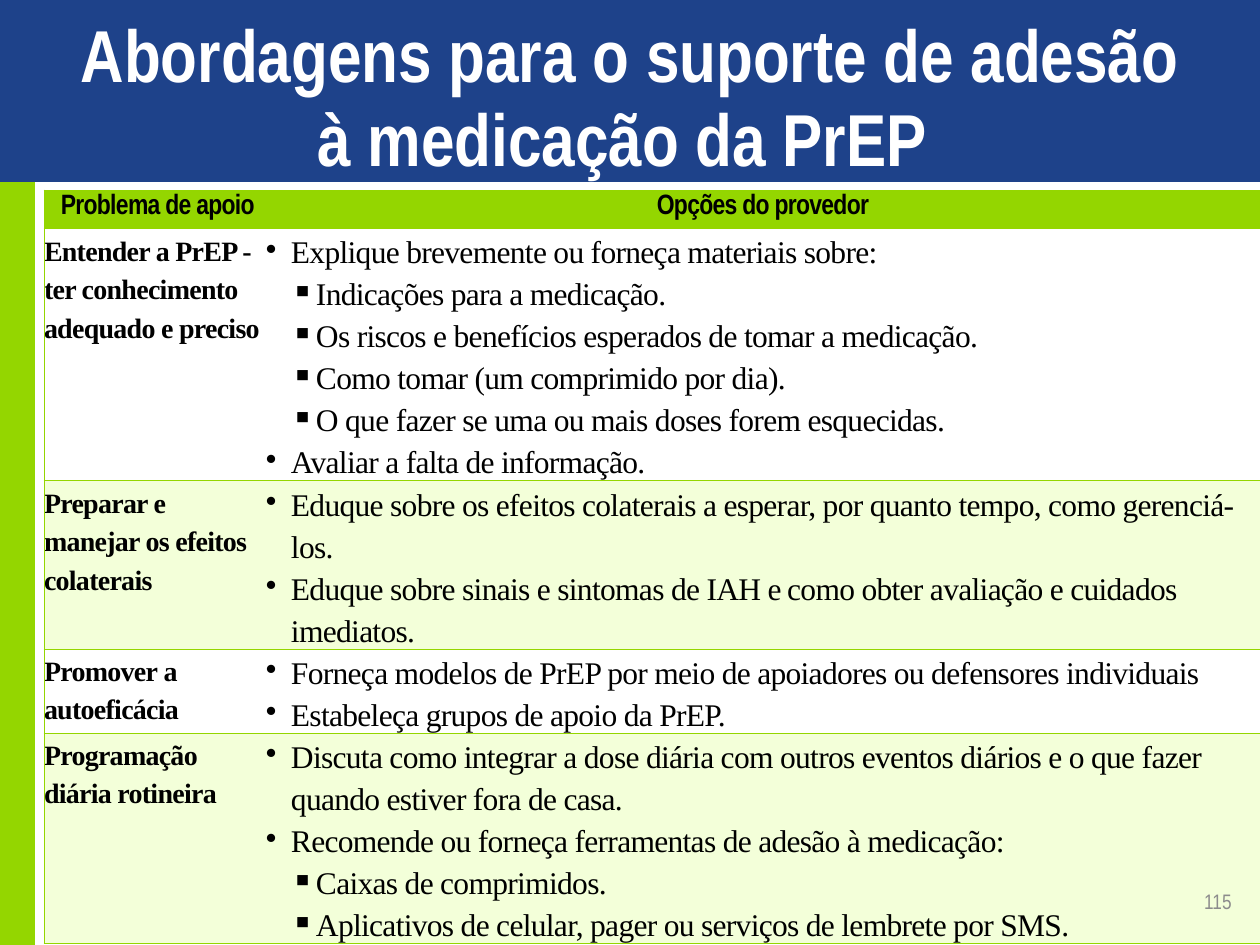
from pptx import Presentation, util as u
from pptx.dml.color import RGBColor
from pptx.enum import shapes, text
from pptx.oxml import parse_xml
from pptx.oxml.ns import nsdecls

EMU_PER_PX = u.Inches(1) / 126

BLUE = RGBColor(0x1E, 0x42, 0x8A)
GREEN = RGBColor(0x94, 0xD6, 0x00)
PALE_GREEN = RGBColor(0xF3, 0xFF, 0xD9)
WHITE = RGBColor(0xFF, 0xFF, 0xFF)
BLACK = RGBColor(0, 0, 0)
GRAY = RGBColor(0x8C, 0x8C, 0x8C)

NARROW = "Arial Narrow"
SERIF = "Times New Roman"

BULLETS = ("•", "▪")
INDENT = 25
HEADER_HEIGHT = 33
LINE_HEIGHT = 42
GAP = "|"  # stands for a narrow space between two runs

HEADERS = ("\u00a0Problema de apoio", "Opções do provedor")

# Label, number of text lines, and options as (level, wording)
ROWS = [
    ("Entender a PrEP - ter conhecimento adequado e preciso", 6, [
        (0, "Explique brevemente ou forneça materiais sobre:"),
        (1, "Indicações para a medicação."),
        (1, "Os riscos e benefícios esperados de tomar a medicação."),
        (1, "Como tomar (um comprimido por dia)."),
        (1, "O que fazer se uma ou mais doses forem esquecidas."),
        (0, "Avaliar a falta de informação."),
    ]),
    ("Preparar e manejar os efeitos colaterais", 4, [
        (0, "Eduque sobre os efeitos colaterais a esperar, por quanto tempo, "
            "como gerenciá-los."),
        (0, "Eduque sobre sinais e sintomas de IAH e|como obter avaliação e "
            "cuidados imediatos."),
    ]),
    ("Promover|a autoeficácia", 2, [
        (0, "Forneça modelos de PrEP por meio de apoiadores ou defensores "
            "individuais"),
        (0, "Estabeleça grupos de apoio da PrEP."),
    ]),
    ("Programação diária rotineira", 5, [
        (0, "Discuta como integrar a dose diária com outros eventos diários e "
            "o que fazer quando estiver fora de casa."),
        (0, "Recomende ou forneça ferramentas de adesão à medicação:"),
        (1, "Caixas de comprimidos."),
        (1, "Aplicativos de celular, pager ou serviços de lembrete por SMS."),
    ]),
]


def px(value):
    return u.Emu(round(value * EMU_PER_PX))


class SlideBuilder:
    def __init__(self, slide):
        self.slide = slide

    def band(self, left, top, width, height, color):
        shape = self.slide.shapes.add_shape(
            shapes.MSO_SHAPE.RECTANGLE, *map(px, (left, top, width, height)))
        shape.shadow.inherit = False
        shape.fill.solid()
        shape.fill.fore_color.rgb = color
        shape.line.fill.background()

    def run(self, paragraph, wording, size, font, color=BLACK, bold=False,
            spacing=0):
        run = paragraph.add_run()
        run.text = wording
        run.font.size = u.Pt(size)
        run.font.name = font
        run.font.bold = bold
        run.font.color.rgb = color
        if spacing:
            run.font._element.set("spc", str(spacing))

    def text_box(self, box, wording, size, color, align, bold=False,
                 line_spacing=None):
        frame = self.slide.shapes.add_textbox(*map(px, box)).text_frame
        frame.word_wrap = True
        frame.vertical_anchor = text.MSO_ANCHOR.MIDDLE
        paragraph = frame.paragraphs[0]
        paragraph.alignment = align
        paragraph.line_spacing = line_spacing
        self.run(paragraph, wording, size, NARROW, color, bold)

    def cell_text(self, paragraph, wording, size, font, bold):
        for index, part in enumerate(wording.split(GAP)):
            if index:
                self.run(paragraph, " ", 14, NARROW, bold=bold)
            self.run(paragraph, part, size, font, bold=bold, spacing=-40)

    def bullet(self, paragraph, level):
        paragraph.level = level
        properties = paragraph._p.get_or_add_pPr()
        properties.set("marL", str(px(INDENT * (level + 1))))
        properties.set("indent", str(-px(INDENT)))
        properties.append(parse_xml(
            f'<a:buChar {nsdecls("a")} char="{BULLETS[level]}"/>'))

    def style_cell(self, cell, color, sides):
        cell.margin_left = cell.margin_right = 0
        cell.margin_top = cell.margin_bottom = 0
        properties = cell._tc.get_or_add_tcPr()
        for side in "LRTB":
            paint = (f'<a:solidFill><a:srgbClr val="{GREEN}"/></a:solidFill>'
                     if side in sides else "<a:noFill/>")
            properties.append(parse_xml(
                f'<a:ln{side} {nsdecls("a")} w="{u.Pt(0.5)}">{paint}'
                f'</a:ln{side}>'))
        cell.fill.solid()
        cell.fill.fore_color.rgb = color

    def table(self, left, top, widths, headers, rows):
        heights = [HEADER_HEIGHT] + [LINE_HEIGHT * row[1] for row in rows]
        table = self.slide.shapes.add_table(
            len(heights), len(widths), px(left), px(top),
            px(sum(widths)), px(sum(heights))).table
        table.first_row = table.horz_banding = False
        for column, width in zip(table.columns, widths):
            column.width = px(width)
        for row, height in zip(table.rows, heights):
            row.height = px(height)

        # Fills and borders
        for index, row in enumerate(table.rows):
            color = (WHITE, PALE_GREEN)[(index - 1) % 2] if index else GREEN
            for cell, sides in zip(row.cells, ("LTB", "RTB")):
                self.style_cell(cell, color, sides)

        # Header row
        for column, wording in enumerate(headers):
            paragraph = table.cell(0, column).text_frame.paragraphs[0]
            paragraph.alignment = text.PP_ALIGN.CENTER
            paragraph.line_spacing = 1.15
            self.cell_text(paragraph, wording, 16, NARROW, True)

        # Labels and their options
        for index, (label, _, options) in enumerate(rows, 1):
            paragraph = table.cell(index, 0).text_frame.paragraphs[0]
            paragraph.line_spacing = u.Pt(22)
            paragraph.space_after = u.Pt(3)
            self.cell_text(paragraph, label, 16, SERIF, True)
            frame = table.cell(index, 1).text_frame
            for number, (level, wording) in enumerate(options):
                paragraph = (frame.add_paragraph() if number
                             else frame.paragraphs[0])
                paragraph.line_spacing = u.Pt(24)
                self.bullet(paragraph, level)
                self.cell_text(paragraph, wording, 18, SERIF, False)


def main():
    presentation = Presentation()
    presentation.slide_width, presentation.slide_height = px(1260), px(945)
    slide = presentation.slides.add_slide(presentation.slide_layouts[6])
    builder = SlideBuilder(slide)

    # Side and title bands
    builder.band(0, 165, 35, 780, GREEN)
    builder.band(0, 0, 1260, 182, BLUE)

    # Title
    builder.text_box((63, 38, 1134, 118),
                     "Abordagens para o suporte de adesão à medicação da PrEP ",
                     42, WHITE, text.PP_ALIGN.CENTER, True, u.Pt(48))

    # Support table
    builder.table(44, 190, (222, 994), HEADERS, ROWS)

    # Page number
    builder.text_box((950, 876, 294, 50), "115", 12, GRAY,
                     text.PP_ALIGN.RIGHT)

    presentation.save("out.pptx")


if __name__ == "__main__":
    main()
